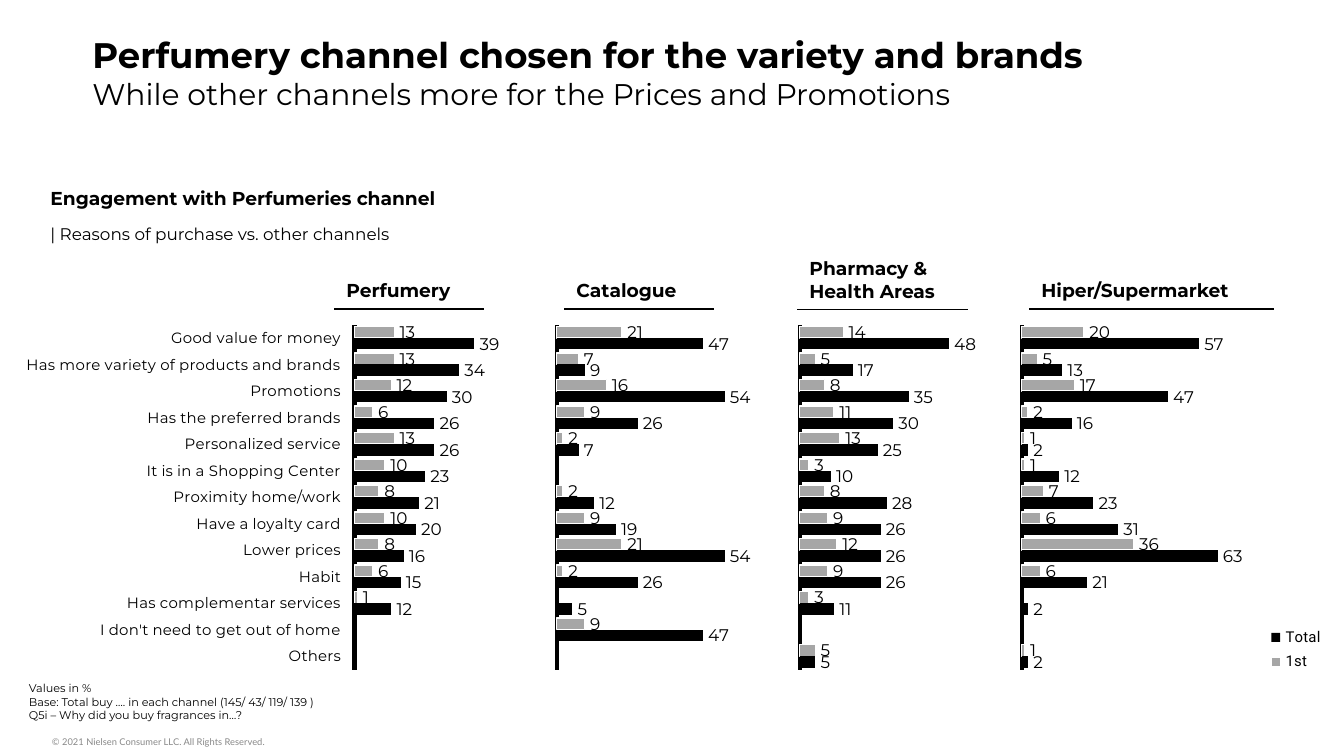
from lxml import etree
from pptx import Presentation
from pptx.chart.data import CategoryChartData
from pptx.dml.color import RGBColor
from pptx.enum.chart import (XL_CHART_TYPE, XL_LABEL_POSITION, XL_LEGEND_POSITION,
                             XL_TICK_LABEL_POSITION, XL_TICK_MARK)
from pptx.enum.text import MSO_ANCHOR, MSO_AUTO_SIZE, PP_ALIGN
from pptx.oxml import parse_xml
from pptx.oxml.ns import nsdecls, qn
from pptx.util import Pt

BAR = XL_CHART_TYPE.BAR_CLUSTERED
OUTSIDE = XL_LABEL_POSITION.OUTSIDE_END
RIGHT = XL_LEGEND_POSITION.RIGHT
NO_LABELS = XL_TICK_LABEL_POSITION.NONE
LOW_LABELS = XL_TICK_LABEL_POSITION.LOW
NO_TICK = XL_TICK_MARK.NONE
TOP, MIDDLE = MSO_ANCHOR.TOP, MSO_ANCHOR.MIDDLE
NO_FIT = MSO_AUTO_SIZE.NONE
LEFT = PP_ALIGN.LEFT

PX = 914400 / 134.4
BLACK = RGBColor(0x00, 0x00, 0x00)
WHITE = RGBColor(0xFF, 0xFF, 0xFF)
GREY = RGBColor(0xA6, 0xA6, 0xA6)
FOOTER_GREY = RGBColor(0x88, 0x88, 0x88)
TEXT_FONT, CHART_FONT, FOOTER_FONT = "Montserrat", "Roboto", "Lato"

REASONS = ["Good value for money", "Has more variety of products and brands", "Promotions",
           "Has the preferred brands", "Personalized service", "It is in a Shopping Center",
           "Proximity home/work", "Have a loyalty card", "Lower prices", "Habit",
           "Has complementar services", "I don't need to get out of home", "Others"]
NUMBERS = [str(n) for n in range(1, len(REASONS) + 1)]
WIDE_PLOT = (0.516, 0.029, 0.469, 0.93)
PLOT = (0.094, 0.029, 0.891, 0.93)
CHART_TOP, CHART_HEIGHT = 314, 371

CHANNELS = [
    {"name": "Perfumery", "head": (333, 273, 152, 36), "left": 16, "width": 656,
     "cats": REASONS, "plot": WIDE_PLOT,
     "first": [13, 13, 12, 6, 13, 10, 8, 10, 8, 6, 1, None, None],
     "total": [39, 34, 30, 26, 26, 23, 21, 20, 16, 15, 12, None, None]},
    {"name": "Catalogue", "head": (563, 273, 152, 36), "left": 524, "width": 349,
     "cats": NUMBERS, "plot": PLOT,
     "first": [21, 7, 16, 9, 2, None, 2, 9, 21, 2, None, 9, None],
     "total": [47, 9, 54, 26, 7, None, 12, 19, 54, 26, 5, 47, None]},
    {"name": "Pharmacy & Health Areas", "head": (796, 251, 173, 58), "left": 767, "width": 349,
     "cats": NUMBERS, "plot": PLOT,
     "first": [14, 5, 8, 11, 13, 3, 8, 9, 12, 9, 3, None, 5],
     "total": [48, 17, 35, 30, 25, 10, 28, 26, 26, 26, 11, None, 5]},
    {"name": "Hiper/Supermarket", "head": (1028, 273, 247, 36), "left": 989, "width": 349,
     "cats": NUMBERS, "plot": PLOT, "legend": (0.78, 0.83, 0.2, 0.15),
     "first": [20, 5, 17, 2, 1, 1, 7, 6, 36, 6, None, None, 1],
     "total": [57, 13, 47, 16, 2, 12, 23, 31, 63, 21, 2, None, 2]},
]


def emu(box):
    """Turn px lengths into EMU."""
    return [round(n * PX) for n in box]


def style(font, size, name=TEXT_FONT, color=BLACK, bold=False):
    """Set the look of a font."""
    font.name, font.size, font.bold = name, Pt(size), bold
    font.color.rgb = color


def add_title(slide, box):
    """Fill the title placeholder with the headline and its second line."""
    sp = slide.shapes.title
    sp.left, sp.top, sp.width, sp.height = emu(box)
    tf = sp.text_frame
    tf.text = ("Perfumery channel chosen for the variety and brands\n"
               "While other channels more for the Prices and Promotions")
    tf.vertical_anchor, tf.auto_size = TOP, NO_FIT
    for p, size, bold in zip(tf.paragraphs, (19, 16), (True, False)):
        p.alignment = LEFT
        style(p.font, size, bold=bold)


def add_note(slide, box, text, size, name=TEXT_FONT, color=BLACK, inset=13):
    """Add a small left-aligned note."""
    tf = slide.shapes.add_textbox(*emu(box)).text_frame
    tf.word_wrap = True
    tf.margin_left = tf.margin_right = round(inset * PX)
    tf.text = text
    for p in tf.paragraphs:
        style(p.font, size, name, color)


def add_heading(slide, box, lines, anchor=MIDDLE):
    """Add a one-column table with a bold first row and a rule under it."""
    table = slide.shapes.add_table(len(lines), 1, *emu(box)).table
    table.first_row = table.horz_banding = False
    for i, text in enumerate(lines):
        cell = table.cell(i, 0)
        cell.text = text
        cell.fill.background()
        cell.vertical_anchor = anchor
        style(cell.text_frame.paragraphs[0].font, 9 if i else 10, bold=not i)
    border = parse_xml(f'<a:lnB {nsdecls("a")} w="12700"><a:solidFill>'
                       f'<a:srgbClr val="{BLACK}"/></a:solidFill></a:lnB>')
    table.cell(0, 0)._tc.get_or_add_tcPr().insert(0, border)


def set_layout(element, index, rect, inner=False):
    """Place a plot area or legend by fractions of the chart."""
    for old in element.findall(qn("c:layout")):
        element.remove(old)
    layout = etree.Element(qn("c:layout"))
    manual = etree.SubElement(layout, qn("c:manualLayout"))
    values = [("layoutTarget", "inner")] if inner else []
    values += [("xMode", "edge"), ("yMode", "edge"), *zip("xywh", rect)]
    for tag, value in values:
        etree.SubElement(manual, qn(f"c:{tag}")).set("val", str(value))
    element.insert(index, layout)


def add_bars(slide, box, channel):
    """Add the paired bars of one channel."""
    data = CategoryChartData(number_format="0")
    data.categories = channel["cats"]
    data.add_series("1st", channel["first"])
    data.add_series("Total", channel["total"])
    chart = slide.shapes.add_chart(BAR, *emu(box), data).chart
    chart.has_title = False
    style(chart.font, 10, CHART_FONT)
    set_layout(chart._chartSpace.chart.plotArea, 0, channel["plot"], inner=True)

    plot = chart.plots[0]
    plot.gap_width, plot.overlap, plot.vary_by_categories = 30, 0, False
    for series, color in zip(plot.series, (GREY, BLACK)):
        series.format.fill.solid()
        series.format.fill.fore_color.rgb = color
        series.invert_if_negative = False
        labels = series.data_labels
        labels.show_value, labels.position = True, OUTSIDE
        labels.number_format, labels.number_format_is_linked = "0", False
        style(labels.font, 9)
    line = plot.series[0].format.line
    line.color.rgb, line.width = WHITE, Pt(0.75)

    axis = chart.category_axis
    axis.reverse_order = True
    axis.major_tick_mark = axis.minor_tick_mark = NO_TICK
    axis.tick_label_position = LOW_LABELS if channel["cats"] is REASONS else NO_LABELS
    style(axis.tick_labels.font, 8)
    axis.format.line.color.rgb, axis.format.line.width = BLACK, Pt(2.25)
    values = chart.value_axis
    values.minimum_scale, values.maximum_scale = 0, 100
    values.has_major_gridlines = values.visible = False

    chart.has_legend = "legend" in channel
    if chart.has_legend:
        legend = chart.legend
        legend.position, legend.include_in_layout = RIGHT, True
        style(legend.font, 8, CHART_FONT)
        set_layout(legend._element, 1, channel["legend"])


def main():
    """Build and save the slide."""
    prs = Presentation()
    prs.slide_width, prs.slide_height = emu((1344, 756))
    slide = prs.slides.add_slide(prs.slide_layouts[5])
    add_note(slide, (52, 730, 745, 27), "© 2021 Nielsen Consumer LLC. All Rights Reserved.",
             5, FOOTER_FONT, FOOTER_GREY, 0)
    add_title(slide, (79, 26, 1238, 93))
    add_note(slide, (16, 675, 836, 54),
             "Values in %\nBase: Total buy …. in each channel (145/ 43/ 119/ 139 )\n"
             "Q5i – Why did you buy fragrances in…?", 6)
    add_heading(slide, (37, 181, 571, 70), ["Engagement with Perfumeries channel",
                                            "| Reasons of purchase vs. other channels"], TOP)
    for channel in CHANNELS:
        box = (channel["left"], CHART_TOP, channel["width"], CHART_HEIGHT)
        add_bars(slide, box, channel)
        add_heading(slide, channel["head"], [channel["name"]])
    prs.save("out.pptx")


if __name__ == "__main__":
    main()
